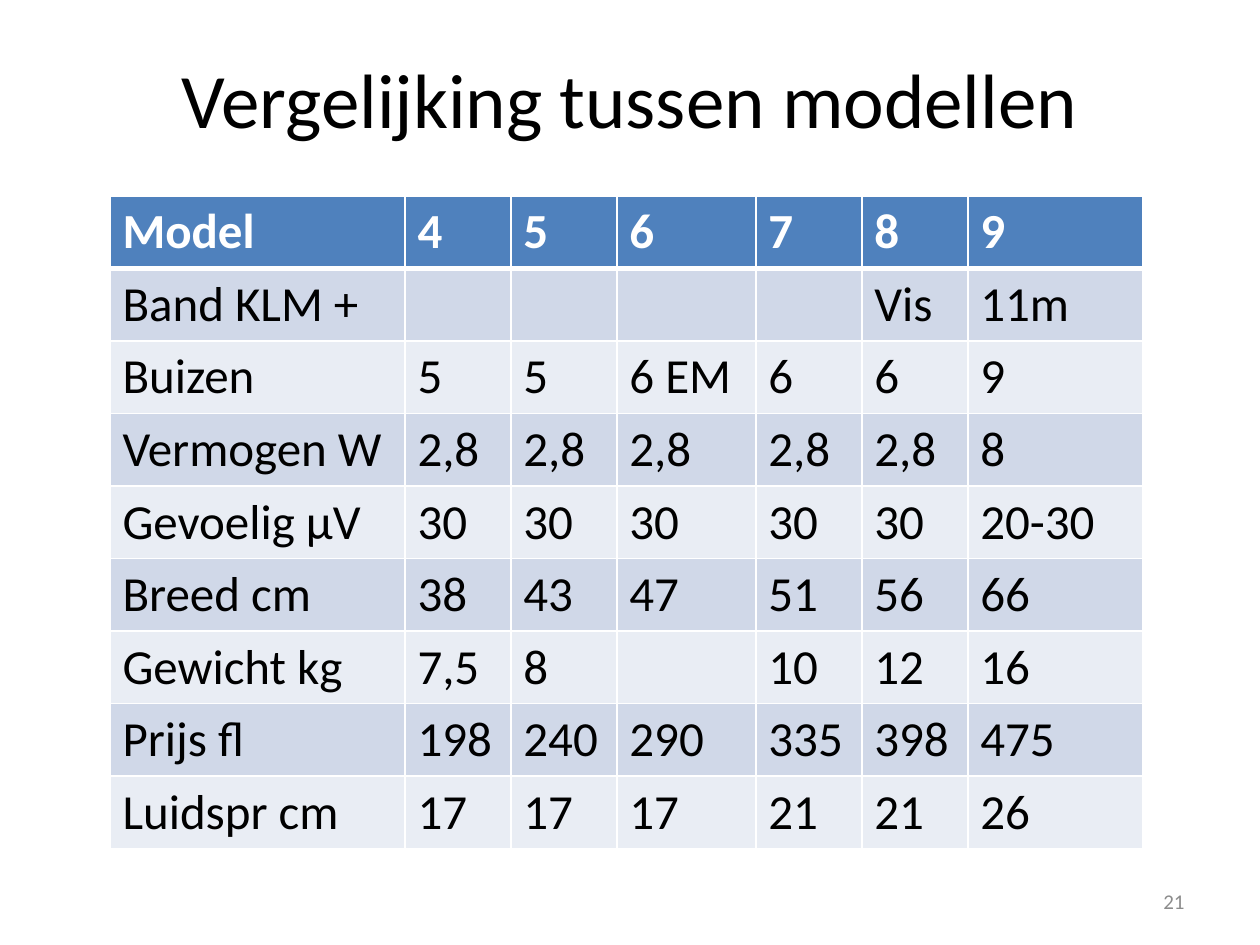
from typing import NamedTuple

from lxml import etree
from pptx import Presentation
from pptx.dml.color import RGBColor
from pptx.enum.text import MSO_ANCHOR, PP_ALIGN
from pptx.oxml.ns import qn
from pptx.util import Pt

LEFT, MID, RIGHT = PP_ALIGN.LEFT, PP_ALIGN.CENTER, PP_ALIGN.RIGHT
CENTRE = MSO_ANCHOR.MIDDLE
FONT = "Calibri"
WHITE, BLACK, GREY = "FFFFFF", "000000", "8C8C8C"
HEAD, DARK, LIGHT = "4F81BD", "D0D8E8", "E9EDF4"
ROW = 72
WIDTHS = [295, 106, 106, 139, 106, 106, 175]
ROWS = [
    ["Model", "4", "5", "6", "7", "8", "9"],
    ["Band KLM +", "", "", "", "", "Vis", "11m"],
    ["Buizen", "5", "5", "6 EM", "6", "6", "9"],
    ["Vermogen W", "2,8", "2,8", "2,8", "2,8", "2,8", "8"],
    ["Gevoelig µV", "30", "30", "30", "30", "30", "20-30"],
    ["Breed cm", "38", "43", "47", "51", "56", "66"],
    ["Gewicht kg", "7,5", "8", "", "10", "12", "16"],
    ["Prijs fl", "198", "240", "290", "335", "398", "475"],
    ["Luidspr cm", "17", "17", "17", "21", "21", "26"],
]


class Box(NamedTuple):
    left: int
    top: int
    width: int
    height: int


def px(num: int) -> int:
    return round(num * 914400 / 126)


def place(box: Box) -> list[int]:
    return [px(num) for num in box]


def color(code: str) -> RGBColor:
    return RGBColor.from_string(code)


def write(frame, text: str, size: int, ink: str = BLACK,
          bold: bool = False, align=LEFT) -> None:
    para = frame.paragraphs[0]
    para.alignment = align
    run = para.add_run()
    run.text = text
    font = run.font
    font.name, font.size, font.bold = FONT, Pt(size), bold
    font.color.rgb = color(ink)


def border(cell, top: int, bottom: int) -> None:
    """Draw white lines on all four sides; widths in points."""
    props = cell._tc.get_or_add_tcPr()
    sides = {"lnL": 1, "lnR": 1, "lnT": top, "lnB": bottom}
    for pos, (side, width) in enumerate(sides.items()):
        line = etree.Element(qn(f"a:{side}"), w=str(Pt(width)))
        fill = etree.SubElement(line, qn("a:solidFill"))
        etree.SubElement(fill, qn("a:srgbClr"), val=WHITE)
        props.insert(pos, line)


def grid(slide, box: Box) -> None:
    table = slide.shapes.add_table(len(ROWS), len(WIDTHS), *place(box)).table
    for col, width in zip(table.columns, WIDTHS):
        col.width = px(width)
    for i, row in enumerate(ROWS):
        table.rows[i].height = px(ROW)
        first = i == 0
        back = HEAD if first else DARK if i % 2 else LIGHT
        for j, text in enumerate(row):
            cell = table.cell(i, j)
            cell.fill.solid()
            cell.fill.fore_color.rgb = color(back)
            border(cell, top=3 if i == 1 else 1, bottom=3 if first else 1)
            if text:
                write(cell.text_frame, text, 28,
                      ink=WHITE if first else BLACK, bold=first)


def main() -> None:
    deck = Presentation()
    deck.slide_width, deck.slide_height = px(1260), px(945)
    slide = deck.slides.add_slide(deck.slide_layouts[5])

    # Title
    title = slide.shapes.title
    title.left, title.top, title.width, title.height = place(
        Box(63, 38, 1134, 120))
    title.text_frame.vertical_anchor = CENTRE
    write(title.text_frame, "Vergelijking tussen modellen", 44, align=MID)

    # Model table
    grid(slide, Box(110, 196, sum(WIDTHS), ROW * len(ROWS)))

    # Page number
    page = slide.shapes.add_textbox(*place(Box(903, 876, 294, 50)))
    page.text_frame.word_wrap = True
    page.text_frame.vertical_anchor = CENTRE
    write(page.text_frame, "21", 12, ink=GREY, align=RIGHT)

    deck.save("out.pptx")


if __name__ == "__main__":
    main()
